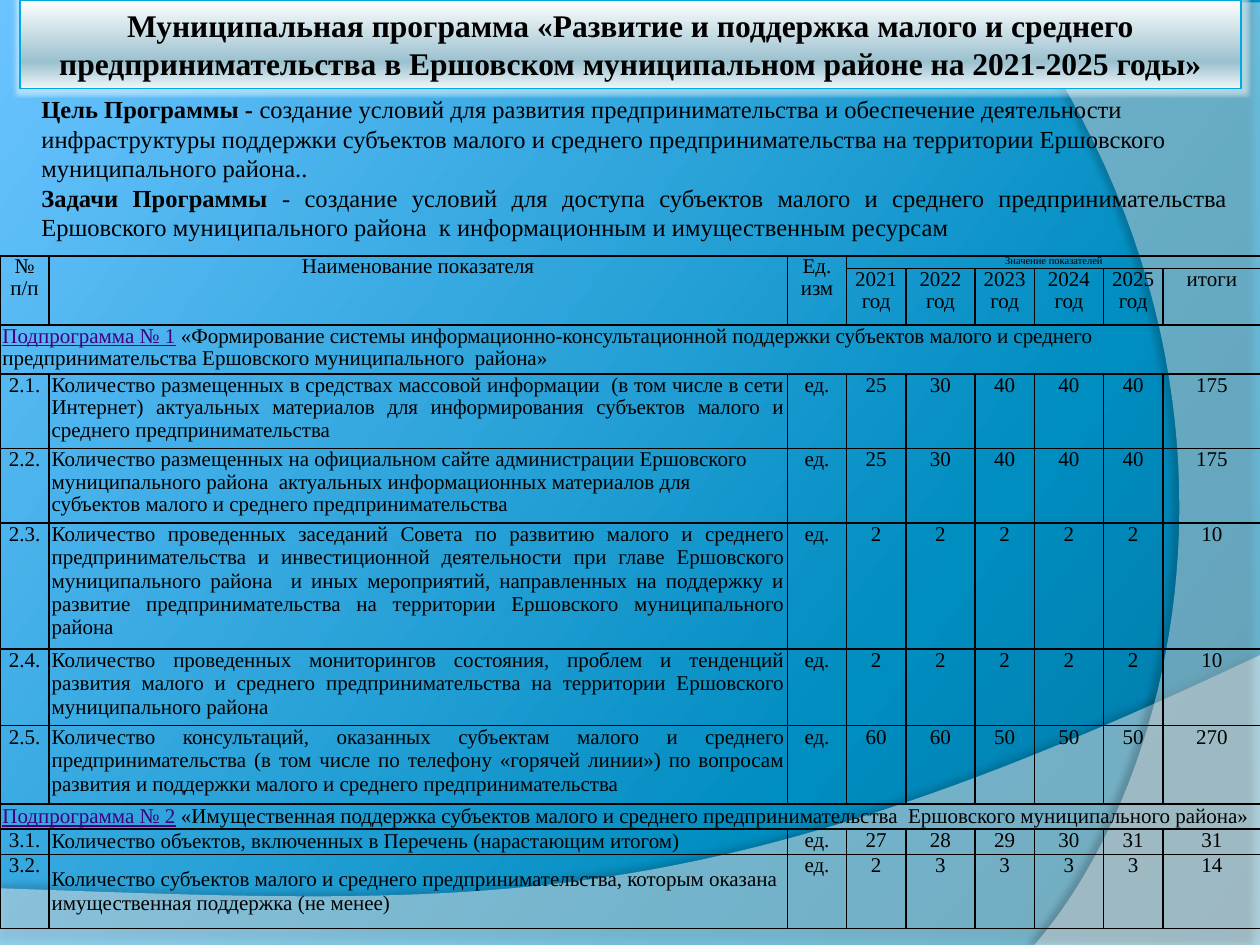
from dataclasses import dataclass

from lxml import etree
from pptx import Presentation, util as u
from pptx.dml.color import RGBColor
from pptx.enum import text
from pptx.oxml import ns, parse_xml


@dataclass(frozen=True)
class Theme:
    """Colours, font and type sizes of the slide."""
    font: str = "Times New Roman"
    ink: str = "000000"
    link: str = "410082"
    white: str = "FFFFFF"
    title_line: str = "00A9E0"
    backdrop: tuple = ((0, "0076A1"), (30, "008DC0"), (100, "6AC3FF"))
    title_fill: tuple = ((0, "FFFFFF"), (70, "9BC1CF"), (100, "EEF5F8"))
    title_size: float = 18
    goal_size: float = 14
    table_size: float = 12
    caption_size: float = 6


THEME = Theme()
CENTER, JUSTIFY, LEFT = text.PP_ALIGN.CENTER, text.PP_ALIGN.JUSTIFY, text.PP_ALIGN.LEFT
TOP, MIDDLE = text.MSO_ANCHOR.TOP, text.MSO_ANCHOR.MIDDLE

TITLE = ("Муниципальная программа «Развитие и поддержка малого и среднего "
         "предпринимательства в Ершовском муниципальном районе на 2021-2025 годы»")
GOALS = (
    (LEFT, "Цель Программы - ",
     "создание условий для развития предпринимательства и обеспечение деятельности инфраструктуры "
     "поддержки субъектов малого и среднего предпринимательства на территории Ершовского "
     "муниципального района.."),
    (JUSTIFY, "Задачи Программы ",
     "- создание условий для доступа субъектов малого и среднего предпринимательства Ершовского "
     "муниципального района  к информационным и имущественным ресурсам"),
)
COLUMNS = (0.39, 5.86, 0.47, 0.47, 0.55, 0.47, 0.55, 0.47, 0.78)
ROWS = (0.1, 0.45, 0.39, 0.59, 0.59, 1, 0.61, 0.62, 0.2, 0.2, 0.59)
HEADINGS = ("№ п/п", "Наименование показателя", "Ед. изм")
PERIODS = ("2021\nгод", "2022 год", "2023 год", "2024 год", "2025 год", "итоги")
SUBPROGRAMMES = (
    (2, "Подпрограмма № 1",
     " «Формирование системы информационно-консультационной поддержки субъектов малого и среднего "
     "предпринимательства Ершовского муниципального  района»", 0.97, TOP),
    (8, "Подпрограмма № 2",
     " «Имущественная поддержка субъектов малого и среднего предпринимательства  Ершовского "
     "муниципального района»", 1.0, MIDDLE),
)
INDICATORS = (
    (3, "2.1.", "Количество размещенных в средствах массовой информации  (в том числе в сети Интернет) "
     "актуальных материалов для информирования субъектов малого и среднего предпринимательства",
     (25, 30, 40, 40, 40, 175), JUSTIFY, 0.97, TOP),
    (4, "2.2.", "Количество размещенных на официальном сайте администрации Ершовского муниципального "
     "района  актуальных информационных материалов для субъектов малого и среднего предпринимательства",
     (25, 30, 40, 40, 40, 175), LEFT, 0.97, TOP),
    (5, "2.3.", "Количество проведенных заседаний Совета по развитию малого и среднего "
     "предпринимательства и инвестиционной деятельности при главе Ершовского муниципального района  "
     "и иных мероприятий, направленных на поддержку и развитие предпринимательства на территории "
     "Ершовского муниципального района",
     (2, 2, 2, 2, 2, 10), JUSTIFY, 1.0, TOP),
    (6, "2.4.", "Количество проведенных мониторингов состояния, проблем и тенденций развития малого и "
     "среднего предпринимательства на территории Ершовского муниципального района",
     (2, 2, 2, 2, 2, 10), JUSTIFY, 1.0, TOP),
    (7, "2.5.", "Количество консультаций, оказанных субъектам малого и среднего предпринимательства "
     "(в том числе по телефону «горячей линии») по вопросам развития и поддержки малого и среднего "
     "предпринимательства",
     (60, 60, 50, 50, 50, 270), JUSTIFY, 1.0, TOP),
    (9, "3.1.", "Количество объектов, включенных в Перечень (нарастающим итогом)",
     (27, 28, 29, 30, 31, 31), JUSTIFY, 1.0, MIDDLE),
    (10, "3.2.", "Количество субъектов малого и среднего предпринимательства, которым оказана "
     "имущественная поддержка (не менее)",
     (2, 3, 3, 3, 3, 14), LEFT, 1.0, MIDDLE),
)


def assign(target, **values):
    """Set several attributes of one object."""
    for name, value in values.items():
        setattr(target, name, value)


def add_run(paragraph, words, size, color=THEME.ink, **values):
    """Append a run in the theme font."""
    run = paragraph.add_run()
    run.text = words
    assign(run.font, name=THEME.font, size=u.Pt(size), **values)
    run.font.color.rgb = RGBColor.from_string(color)


def set_gradient(fill, element, stops, angle):
    """Give a fill a linear gradient with any number of stops."""
    fill.gradient()
    fill.gradient_angle = angle
    stop_list = element.find(".//" + ns.qn("a:gsLst"))
    for stop in list(stop_list):
        stop_list.remove(stop)
    for position, color in stops:
        stop = etree.SubElement(stop_list, ns.qn("a:gs"), pos=str(position * 1000))
        etree.SubElement(stop, ns.qn("a:srgbClr"), val=color)


def add_effect(shape, effect, color, alpha, **values):
    """Put one effect with a translucent colour on a shape."""
    settings = " ".join(f'{name}="{value}"' for name, value in values.items())
    shape.shadow.inherit = False
    shape._element.spPr.find(ns.qn("a:effectLst")).append(parse_xml(
        f'<a:{effect} {ns.nsdecls("a")} {settings}><a:srgbClr val="{color}">'
        f'<a:alpha val="{alpha * 1000}"/></a:srgbClr></a:{effect}>'))


def curve(start, control1, control2, end, steps=48):
    """Return points along a cubic curve."""
    weights = [((1 - t) ** 3, 3 * t * (1 - t) ** 2, 3 * t * t * (1 - t), t ** 3)
               for t in (step / steps for step in range(steps + 1))]
    corners = (start, control1, control2, end)
    return [tuple(sum(w * corner[axis] for w, corner in zip(row, corners)) for axis in (0, 1))
            for row in weights]


def add_wave(slide, points, opacity, shadow_alpha, distance, direction):
    """Draw a translucent white wave with a soft shadow."""
    corners = [(u.Inches(x), u.Inches(y)) for x, y in points]
    builder = slide.shapes.build_freeform(*corners[0])
    builder.add_line_segments(corners[1:], close=True)
    shape = builder.convert_to_shape()
    shape.fill.solid()
    shape.fill.fore_color.rgb = RGBColor.from_string(THEME.white)
    color = shape._element.spPr.find(ns.qn("a:solidFill"))[0]
    etree.SubElement(color, ns.qn("a:alpha"), val=str(opacity * 1000))
    shape.line.fill.background()
    add_effect(shape, "outerShdw", THEME.ink, shadow_alpha, blurRad=u.Pt(4),
               dist=u.Pt(distance), dir=direction * 60000, algn="ctr", rotWithShape=0)


def format_title(slide):
    """Place the title above the waves as a glowing gradient bar."""
    title = slide.shapes.title
    slide.shapes._spTree.append(title._element)
    assign(title, left=u.Inches(0.16), top=0, width=u.Inches(9.69), height=u.Inches(0.7))
    set_gradient(title.fill, title._element, THEME.title_fill, 270)
    title.line.color.rgb = RGBColor.from_string(THEME.title_line)
    title.line.width = u.Pt(0.75)
    add_effect(title, "glow", THEME.white, 50, rad=u.Pt(5))
    margins = dict.fromkeys(("margin_left", "margin_right", "margin_top", "margin_bottom"), u.Inches(0.05))
    assign(title.text_frame, word_wrap=True, vertical_anchor=MIDDLE,
           auto_size=text.MSO_AUTO_SIZE.NONE, **margins)
    paragraph = title.text_frame.paragraphs[0]
    paragraph.alignment = CENTER
    add_run(paragraph, TITLE, THEME.title_size, bold=True)


def add_goals(slide):
    """Write the goal and the tasks of the programme."""
    frame = slide.shapes.add_textbox(*map(u.Inches, (0.23, 0.7, 9.61, 1.28))).text_frame
    frame.word_wrap = True
    for index, (alignment, label, words) in enumerate(GOALS):
        paragraph = frame.add_paragraph() if index else frame.paragraphs[0]
        paragraph.alignment = alignment
        add_run(paragraph, label, THEME.goal_size, bold=True)
        add_run(paragraph, words, THEME.goal_size, bold=False)


def format_cell(cell):
    """Clear the fill of a cell and draw its borders."""
    assign(cell, margin_left=u.Inches(0.02), margin_right=u.Inches(0.02), margin_top=0, margin_bottom=0)
    cell.fill.background()
    properties = cell._tc.get_or_add_tcPr()
    for index, side in enumerate(("lnL", "lnR", "lnT", "lnB")):
        properties.insert(index, parse_xml(
            f'<a:{side} {ns.nsdecls("a")} w="{u.Pt(1)}"><a:solidFill>'
            f'<a:srgbClr val="{THEME.ink}"/></a:solidFill></a:{side}>'))


def write_cell(cell, words, spacing, alignment=CENTER, anchor=TOP, link="", size=THEME.table_size):
    """Write a cell, one paragraph a line, after an optional underlined link."""
    cell.vertical_anchor = anchor
    for index, line in enumerate(words.split("\n")):
        frame = cell.text_frame
        paragraph = frame.add_paragraph() if index else frame.paragraphs[0]
        assign(paragraph, alignment=alignment, line_spacing=spacing)
        if link:
            add_run(paragraph, link, size, THEME.link, underline=True)
        add_run(paragraph, line, size)


def add_indicators(slide):
    """Build the table of indicators by year."""
    table = slide.shapes.add_table(len(ROWS), len(COLUMNS), 0, u.Inches(2.03),
                                   u.Inches(10), u.Inches(sum(ROWS))).table
    assign(table, first_row=False, horz_banding=False)
    for column, width in zip(table.columns, COLUMNS):
        column.width = u.Inches(width)
    for row, height in zip(table.rows, ROWS):
        row.height = u.Inches(height)
    for cell in table.iter_cells():
        format_cell(cell)
    for column, heading in enumerate(HEADINGS):
        table.cell(0, column).merge(table.cell(1, column))
        write_cell(table.cell(0, column), heading, 0.95)
    table.cell(0, 3).merge(table.cell(0, 8))
    write_cell(table.cell(0, 3), "Значение показателей", 0.95, size=THEME.caption_size)
    for column, period in enumerate(PERIODS, 3):
        write_cell(table.cell(1, column), period, 0.95)
    for row, link, words, spacing, anchor in SUBPROGRAMMES:
        table.cell(row, 0).merge(table.cell(row, 8))
        write_cell(table.cell(row, 0), words, spacing, LEFT, anchor, link)
    for row, number, name, values, alignment, spacing, anchor in INDICATORS:
        write_cell(table.cell(row, 1), name, spacing, alignment, anchor)
        for column, value in zip((0, *range(2, 9)), (number, "ед.", *values)):
            write_cell(table.cell(row, column), str(value), spacing)


def main():
    """Build and save the slide."""
    presentation = Presentation()
    assign(presentation, slide_width=u.Inches(10), slide_height=u.Inches(7.5))
    slide = presentation.slides.add_slide(presentation.slide_layouts[5])
    set_gradient(slide.background.fill, slide._element, THEME.backdrop, 143)
    add_wave(slide, [(0, 7.5), (10, 7.5), *curve((10, 5.2), (5.59, 7.29), (3.91, 7.19), (0, 7.05))],
             45, 35, 3.5, 270)
    add_wave(slide, [(10, 0.02), (10, 7.5), *curve((8.21, 7.5), (9.35, 6.19), (10.18, 3), (8, 0))],
             40, 45, 4, 180)
    format_title(slide)
    add_goals(slide)
    add_indicators(slide)
    presentation.save("out.pptx")


if __name__ == "__main__":
    main()
